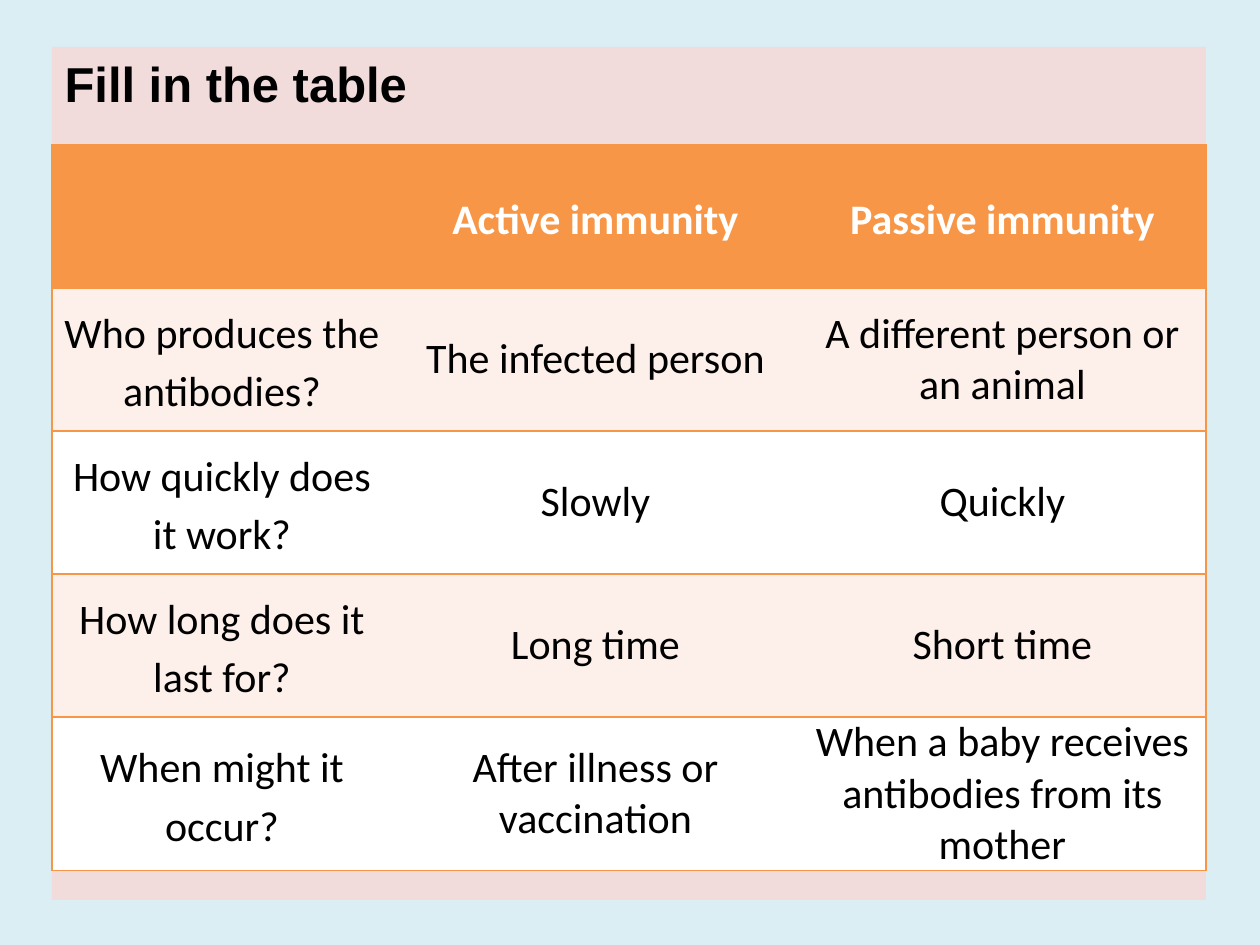
from lxml import etree
from pptx import Presentation
from pptx import util as u
from pptx.dml.color import RGBColor
from pptx.enum import text
from pptx.oxml import ns

PX = 914400 / 126  # EMU in one px

SKY = RGBColor(0xDB, 0xEE, 0xF4)
PINK = RGBColor(0xF2, 0xDC, 0xDB)
ORANGE = RGBColor(0xF7, 0x96, 0x46)
PEACH = RGBColor(0xFD, 0xEF, 0xE9)
WHITE = RGBColor(0xFF, 0xFF, 0xFF)
BLACK = RGBColor(0, 0, 0)

COL_WIDTHS = (340, 407, 407)
ROW_HEIGHT = 143
ROWS = (
    ("", "Active immunity", "Passive immunity"),
    ("Who produces the antibodies?", "The infected person", "A different person or an animal"),
    ("How quickly does it work?", "Slowly", "Quickly"),
    ("How long does it last for?", "Long time", "Short time"),
    ("When might it occur?", "After illness or vaccination",
     "When a baby receives antibodies from its mother"),
)


def px(n):
    return u.Emu(round(n * PX))


def apply(obj, values):
    for name, value in values.items():
        setattr(obj, name, value)


def write(tf, words, color, font, para):
    p = tf.paragraphs[0]
    apply(p, para)
    r = p.add_run()
    r.text = words
    apply(r.font, font)
    r.font.color.rgb = color


def add_title(s, words, box):
    sp = s.shapes.title
    apply(sp, dict(zip(("left", "top", "width", "height"), map(px, box))))
    sp.fill.solid()
    sp.fill.fore_color.rgb = PINK
    tf = sp.text_frame
    apply(tf, {"vertical_anchor": text.MSO_ANCHOR.TOP, "word_wrap": True,
               "auto_size": text.MSO_AUTO_SIZE.NONE})
    write(tf, words, BLACK, {"name": "Arial", "size": u.Pt(28), "bold": True},
          {"alignment": text.PP_ALIGN.LEFT, "space_after": u.Pt(6)})


def set_borders(cell, visible):
    """Draw the named sides in orange and hide the others."""
    tc_pr = cell._tc.get_or_add_tcPr()
    for side in "LRTB":
        ln = etree.SubElement(tc_pr, ns.qn("a:ln" + side), w=str(u.Pt(1)))
        if side in visible:
            fill = etree.SubElement(ln, ns.qn("a:solidFill"))
            etree.SubElement(fill, ns.qn("a:srgbClr"), val=str(ORANGE))
        else:
            etree.SubElement(ln, ns.qn("a:noFill"))


def format_cell(cell, words, row, col):
    header = row == 0
    set_borders(cell, "TB" + {0: "L", len(COL_WIDTHS) - 1: "R"}.get(col, ""))
    cell.fill.solid()
    cell.fill.fore_color.rgb = ORANGE if header else (WHITE, PEACH)[row % 2]
    apply(cell, {"vertical_anchor": text.MSO_ANCHOR.MIDDLE,
                 "margin_left": u.Inches(0.07), "margin_right": u.Inches(0.07),
                 "margin_top": 0, "margin_bottom": 0})
    if words:
        write(cell.text_frame, words, WHITE if header else BLACK,
              {"name": "Calibri", "size": u.Pt(24), "bold": header},
              {"alignment": text.PP_ALIGN.CENTER,
               "line_spacing": 1.15 if header or col == 0 else 1.0,
               "space_after": u.Pt(10 if header else 0)})


def add_immunity_table(s, left, top):
    frame = s.shapes.add_table(len(ROWS), len(COL_WIDTHS), px(left), px(top),
                               px(sum(COL_WIDTHS)), px(ROW_HEIGHT * len(ROWS)))
    table = frame.table
    for column, width in zip(table.columns, COL_WIDTHS):
        column.width = px(width)
    for i, row in enumerate(ROWS):
        table.rows[i].height = px(ROW_HEIGHT)
        for j, words in enumerate(row):
            format_cell(table.cell(i, j), words, i, j)


def main():
    prs = Presentation()
    apply(prs, {"slide_width": px(1260), "slide_height": px(945)})
    s = prs.slides.add_slide(prs.slide_layouts[5])

    # Background
    s.background.fill.solid()
    s.background.fill.fore_color.rgb = SKY

    # Title panel, with the table on top of it
    add_title(s, "Fill in the table", (52, 47, 1154, 853))
    add_immunity_table(s, 52, 145)

    prs.save("out.pptx")


if __name__ == "__main__":
    main()
